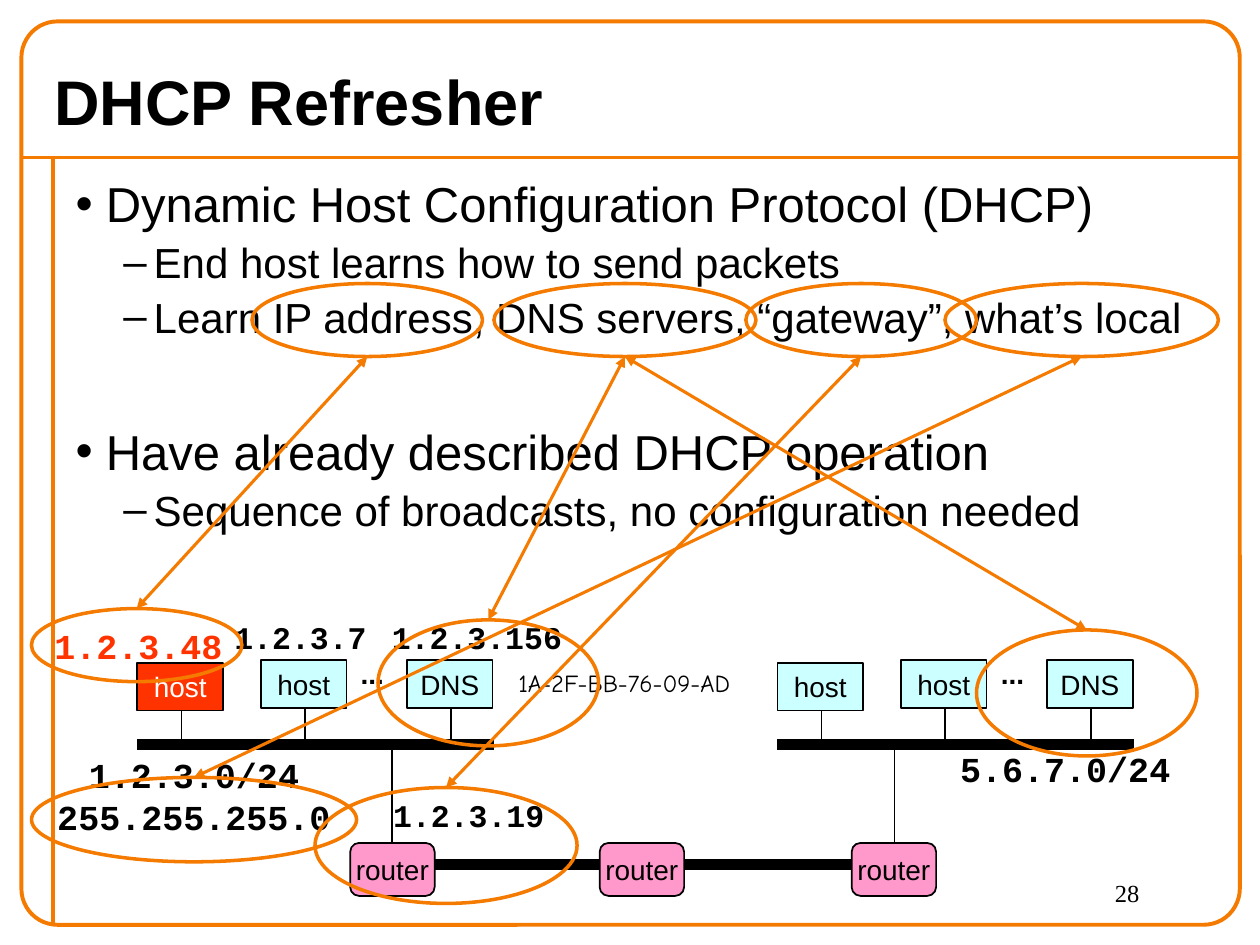
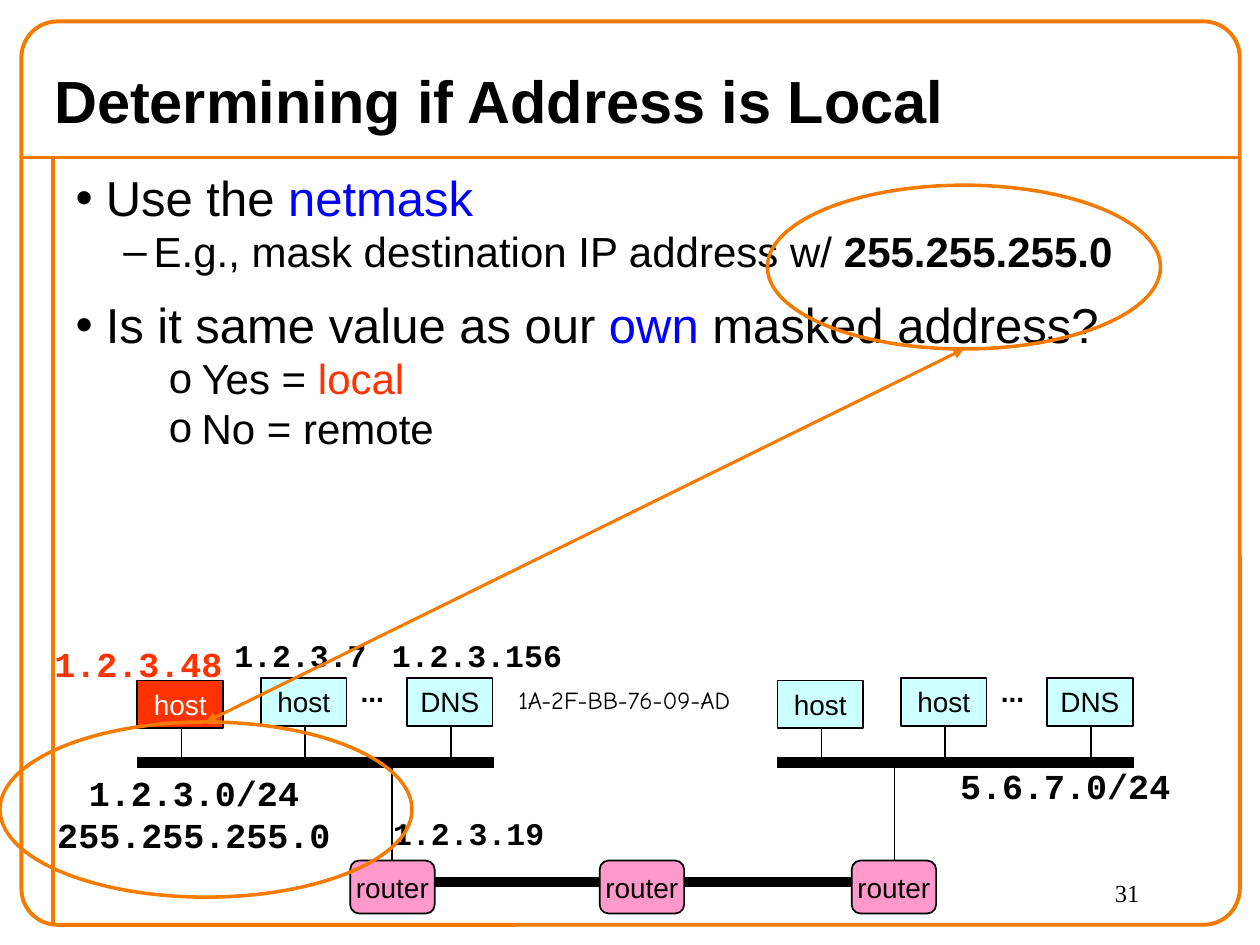
from lxml.etree import SubElement
from pptx import Presentation
from pptx.dml.color import RGBColor
from pptx.enum.shapes import MSO_CONNECTOR, MSO_SHAPE
from pptx.enum.text import MSO_ANCHOR, MSO_AUTO_SIZE, PP_ALIGN
from pptx.oxml.ns import qn
from pptx.util import Inches, Pt

ORANGE, BLACK, WHITE = "F47A00", "000000", "FFFFFF"
RED, BLUE, CYAN, PINK = "FF3300", "0000FF", "CCFFFF", "FF99CC"
SANS, MONO, HAND, SERIF = "Arial", "Courier New", "Comic Neue", "Times New Roman"

LEVELS = [
    {"bullet": "•", "size": 28, "left": 0.24, "hang": 0.24, "before": 14.5},
    {"bullet": "–", "size": 24, "left": 0.62, "hang": 0.24, "before": 2.3},
    {"bullet": "o", "size": 24, "left": 1.0, "hang": 0.26, "before": 2.3},
]


def color(hex_code):
    return RGBColor.from_string(hex_code)


def box_lengths(box):
    return [Inches(value) for value in box]


def style_run(run, size, hex_code=BLACK, font=SANS, bold=False):
    run.font.size = Pt(size)
    run.font.name = font
    run.font.bold = bold
    run.font.color.rgb = color(hex_code)


def style_text(text_frame, size, hex_code, font, bold, align):
    for paragraph in text_frame.paragraphs:
        paragraph.alignment = align
        for run in paragraph.runs:
            style_run(run, size, hex_code, font, bold)


def add_label(slide, box, text, size, hex_code=BLACK, font=MONO, bold=True,
              align=PP_ALIGN.CENTER, anchor=MSO_ANCHOR.TOP):
    text_frame = slide.shapes.add_textbox(*box_lengths(box)).text_frame
    text_frame.word_wrap = False
    text_frame.vertical_anchor = anchor
    text_frame.text = text
    style_text(text_frame, size, hex_code, font, bold, align)


def add_outline(slide, kind, box, hex_code, width):
    shape = slide.shapes.add_shape(kind, *box_lengths(box))
    shape.shadow.inherit = False
    shape.fill.background()
    shape.line.color.rgb = color(hex_code)
    shape.line.width = Pt(width)
    return shape


def add_node(slide, box, text, fill, text_color=BLACK, kind=MSO_SHAPE.RECTANGLE):
    shape = add_outline(slide, kind, box, BLACK, 1)
    shape.fill.solid()
    shape.fill.fore_color.rgb = color(fill)
    text_frame = shape.text_frame
    text_frame.word_wrap = False
    text_frame.vertical_anchor = MSO_ANCHOR.MIDDLE
    text_frame.text = text
    style_text(text_frame, 16, text_color, SANS, False, PP_ALIGN.CENTER)


def add_line(slide, start, end, hex_code=BLACK, width=1, arrows=False):
    line = slide.shapes.add_connector(
        MSO_CONNECTOR.STRAIGHT, *box_lengths(start + end))
    line.line.color.rgb = color(hex_code)
    line.line.width = Pt(width)
    if arrows:
        outline = line.line._get_or_add_ln()
        for tag in ("a:headEnd", "a:tailEnd"):
            SubElement(outline, qn(tag), type="triangle")
    SubElement(line._element.spPr, qn("a:effectLst"))


def add_frame(slide, number):
    left, top, width, height = 0.17, 0.17, 9.67, 7.17
    rule = 1.25
    add_line(slide, (left, rule), (left + width, rule), ORANGE, 2.25)
    add_line(slide, (0.42, rule), (0.42, top + height), ORANGE, 2.25)
    border = add_outline(slide, MSO_SHAPE.ROUNDED_RECTANGLE,
                         (left, top, width, height), ORANGE, 2.25)
    border.adjustments[0] = 0.04
    add_label(slide, (8.75, 6.92, 1, 0.42), str(number), 14,
              font=SERIF, bold=False, align=PP_ALIGN.LEFT)


def place(shape, box):
    shape.left, shape.top, shape.width, shape.height = box_lengths(box)
    shape.text_frame.auto_size = MSO_AUTO_SIZE.NONE


def fill_title(slide, text, size):
    title = slide.shapes.title
    place(title, (0.33, 0.42, 9.42, 0.75))
    title.text_frame.vertical_anchor = MSO_ANCHOR.MIDDLE
    title.text_frame.text = text
    style_text(title.text_frame, size, BLACK, SANS, True, PP_ALIGN.LEFT)


def set_bullet(paragraph, style):
    properties = paragraph._p.get_or_add_pPr()
    properties.set("marL", str(Inches(style["left"])))
    properties.set("indent", str(-Inches(style["hang"])))
    SubElement(properties, qn("a:buChar"), char=style["bullet"])


def fill_body(slide, items, line_spacing=1.0):
    body = slide.placeholders[1]
    place(body, (0.5, 1.33, 9.25, 3.36))
    text_frame = body.text_frame
    text_frame.margin_top = Inches(0.05)
    text_frame.vertical_anchor = MSO_ANCHOR.TOP
    for index, (level, pieces, extra) in enumerate(items):
        paragraph = text_frame.add_paragraph() if index else text_frame.paragraphs[0]
        style = LEVELS[level]
        paragraph.level = level
        paragraph.line_spacing = line_spacing
        paragraph.space_before = Pt(style["before"] + extra if index else 0)
        set_bullet(paragraph, style)
        for text, hex_code, bold in pieces:
            run = paragraph.add_run()
            run.text = text
            style_run(run, style["size"], hex_code, bold=bold)


def plain(level, text, extra=0):
    return level, [(text, BLACK, False)], extra


def add_lan(slide, left, top, first_fill, first_text):
    bus = top + 1.05
    add_line(slide, (left, bus), (left + 2.83, bus), width=6)
    nodes = [
        (0, 0.4, "host", first_fill, first_text),
        (0.98, 0.38, "host", CYAN, BLACK),
        (2.14, 0.38, "DNS", CYAN, BLACK),
    ]
    for x, y, text, fill, text_color in nodes:
        drop = left + x + 0.35
        add_line(slide, (drop, top + 0.71), (drop, bus))
        add_node(slide, (left + x, top + y, 0.68, 0.38), text, fill, text_color)
    add_label(slide, (left + 1.67, top + 0.3, 0.39, 0.37), "...", 16,
              font=SANS, anchor=MSO_ANCHOR.MIDDLE)


def add_network(slide, top):
    add_lan(slide, 1.09, top, RED, WHITE)
    add_lan(slide, 6.17, top, CYAN, BLACK)
    routers = [2.78, 4.76, 6.76]
    width, router_top = 0.67, top + 1.83
    for x in (3.11, 7.1):
        add_line(slide, (x, top + 1.03), (x, router_top))
    for start, end in zip(routers, routers[1:]):
        add_line(slide, (start + width, top + 2), (end, top + 2), width=6)
    for x in routers:
        add_node(slide, (x, router_top, width, 0.42), "router", PINK,
                 kind=MSO_SHAPE.ROUNDED_RECTANGLE)
    addresses = [
        (0.25, 1.07, 2.58, 0.77, "1.2.3.0/24\n255.255.255.0", 20, BLACK),
        (7.47, 1.02, 1.97, 0.43, "5.6.7.0/24", 20, BLACK),
        (1.71, 0, 1.35, 0.4, "1.2.3.7", 18, BLACK),
        (2.96, 0, 1.65, 0.4, "1.2.3.156", 18, BLACK),
        (0.25, 0.05, 1.7, 0.43, "1.2.3.48", 20, RED),
        (2.97, 1.41, 1.5, 0.4, "1.2.3.19", 18, BLACK),
    ]
    for x, y, w, h, text, size, hex_code in addresses:
        add_label(slide, (x, top + y, w, h), text, size, hex_code)
    add_label(slide, (3.92, top + 0.39, 2.07, 0.33), "1A-2F-BB-76-09-AD", 14,
              font=HAND, bold=False, anchor=MSO_ANCHOR.MIDDLE)


def add_callout(slide, term, targets):
    for ellipse in [term, *targets]:
        add_outline(slide, MSO_SHAPE.OVAL, ellipse, ORANGE, 2)
    left, top, width, height = term
    for x, y, w, h in targets:
        add_line(slide, (left + width / 2, top + height), (x + w / 2, y),
                 ORANGE, 1.75, arrows=True)


def add_content_slide(presentation, number, title, title_size):
    slide = presentation.slides.add_slide(presentation.slide_layouts[1])
    add_frame(slide, number)
    fill_title(slide, title, title_size)
    return slide


def build_refresher(presentation):
    slide = add_content_slide(presentation, 28, "DHCP Refresher", 36)
    fill_body(slide, [
        plain(0, "Dynamic Host Configuration Protocol (DHCP)"),
        plain(1, "End host learns how to send packets"),
        plain(1, "Learn IP address, DNS servers, “gateway”, what’s local"),
        plain(0, "Have already described DHCP operation", 31),
        plain(1, "Sequence of broadcasts, no configuration needed"),
    ])
    add_network(slide, 4.86)
    term_top, term_height = 2.25, 0.58
    callouts = [
        (2, 1.83, [(0.25, 4.83, 1.67, 0.58)]),
        (7.5, 2.17, [(0.25, 6.17, 2.58, 0.67)]),
        (5.92, 1.83, [(2.5, 6.25, 2.08, 0.92)]),
        (3.92, 2.08, [(3, 4.92, 1.75, 1), (7.75, 5, 1.75, 1)]),
    ]
    for left, width, targets in callouts:
        add_callout(slide, (left, term_top, width, term_height), targets)


def build_local_check(presentation):
    slide = add_content_slide(presentation, 31, "Determining if Address is Local", 34)
    fill_body(slide, [
        (0, [("Use the ", BLACK, False), ("netmask", BLUE, False)], 0),
        (1, [("E.g., mask destination IP address w/ ", BLACK, False),
             ("255.255.255.0", BLACK, True)], 0),
        (0, [("Is it same value as our ", BLACK, False), ("own ", BLUE, False),
             ("masked address?", BLACK, False)], 0),
        (2, [("Yes = ", BLACK, False), ("local", RED, False)], 0),
        plain(2, "No = remote"),
    ], line_spacing=0.9)
    add_network(slide, 5)
    add_callout(slide, (6.09, 1.47, 3.12, 1.3), [(0, 5.73, 3.27, 1.39)])


def main():
    presentation = Presentation()
    presentation.slide_width = Inches(10)
    presentation.slide_height = Inches(7.5)
    build_refresher(presentation)
    build_local_check(presentation)
    presentation.save("out.pptx")


if __name__ == "__main__":
    main()
